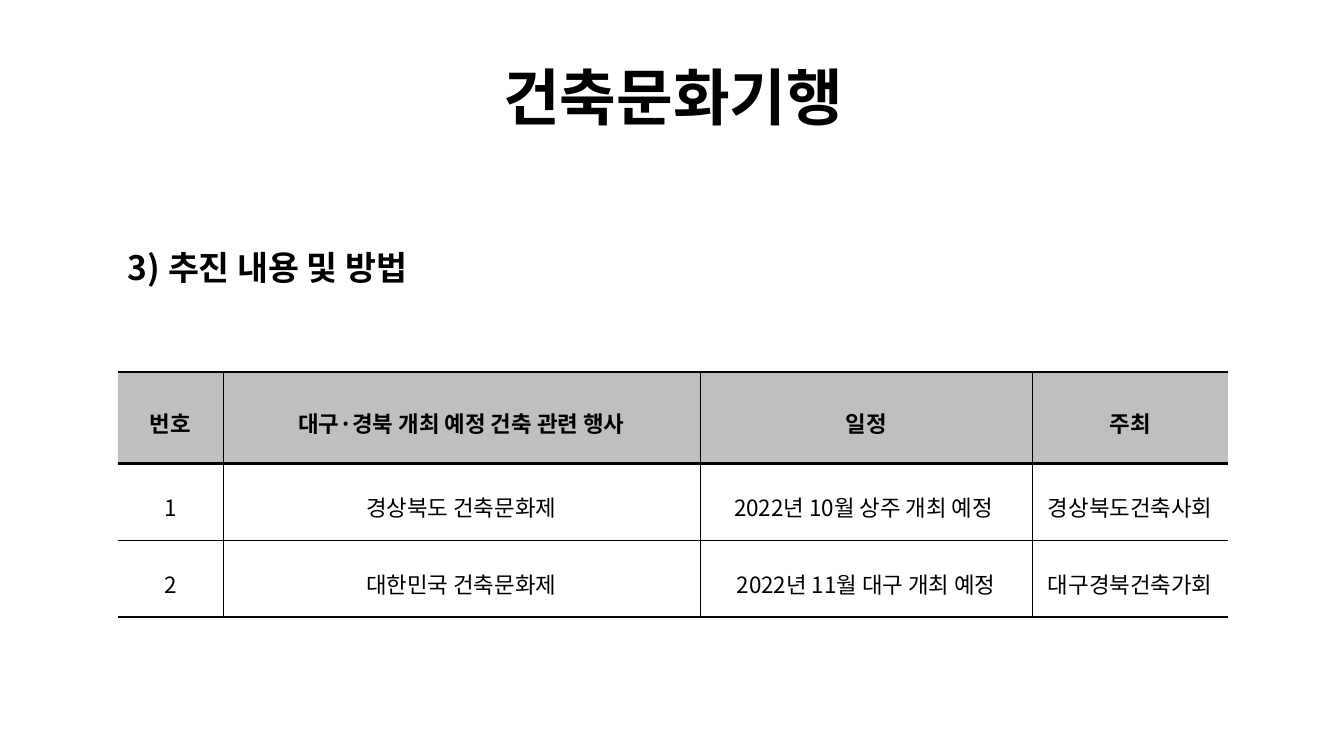
from lxml import etree
from pptx import Presentation
from pptx import util as u
from pptx.dml.color import RGBColor
from pptx.enum import text
from pptx.oxml import ns

FONT = "Noto Sans CJK KR"
INK = "000000"
HEADER_FILL = "BFBFBF"

HEADING = "건축문화기행"
SECTION = "3) 추진 내용 및 방법"
EVENTS = [
    ["번호", "대구·경북 개최 예정 건축 관련 행사", "일정", "주최"],
    ["1", "경상북도 건축문화제", "2022년 10월 상주 개최 예정 ", "경상북도건축사회"],
    ["2", "대한민국 건축문화제", "2022년 11월 대구 개최 예정", "대구경북건축가회"],
]
COLUMNS = [1.04, 4.73, 3.3, 1.94]
ROWS = [0.91, 0.76, 0.76]
ROW_RULES = [1.7, 1.98, 0.25, 1.7]
COLUMN_RULES = [0, 0.28, 0.28, 0.28, 0]
LEFT, TABLE_TOP = 1.17, 3.69
WIDTH = sum(COLUMNS)


def color(value):
    return RGBColor.from_string(value)


def write(frame, words, size, bold, align, spacing, before=0):
    paragraph = frame.paragraphs[0]
    paragraph.alignment = align
    paragraph.line_spacing = spacing
    paragraph.space_before = u.Pt(before)
    run = paragraph.add_run()
    run.text = words
    run.font.name = FONT
    run.font.size = u.Pt(size)
    run.font.bold = bold
    run.font.color.rgb = color(INK)
    east_asian = etree.SubElement(run.font._element, ns.qn("a:ea"))
    east_asian.set("typeface", FONT)


def add_words(slide, box, anchor, *style):
    frame = slide.shapes.add_textbox(*map(u.Inches, box)).text_frame
    frame.word_wrap = True
    frame.vertical_anchor = anchor
    write(frame, *style)


def rule_cell(cell, widths):
    properties = cell._tc.get_or_add_tcPr()
    for place, (side, width) in enumerate(zip("LRTB", widths)):
        line = etree.Element(ns.qn(f"a:ln{side}"), w=str(u.Pt(width)))
        if width:
            fill = etree.SubElement(line, ns.qn("a:solidFill"))
            etree.SubElement(fill, ns.qn("a:srgbClr"), val=INK)
        else:
            etree.SubElement(line, ns.qn("a:noFill"))
        properties.insert(place, line)


def add_events(slide):
    box = map(u.Inches, (LEFT, TABLE_TOP, WIDTH, sum(ROWS)))
    events = slide.shapes.add_table(len(ROWS), len(COLUMNS), *box).table
    events.horz_banding = False
    for column, width in zip(events.columns, COLUMNS):
        column.width = u.Inches(width)
    for r, (row, height) in enumerate(zip(events.rows, ROWS)):
        row.height = u.Inches(height)
        for c, cell in enumerate(row.cells):
            cell.margin_left = cell.margin_right = u.Inches(0.02)
            cell.margin_top = cell.margin_bottom = u.Inches(0.02)
            cell.vertical_anchor = text.MSO_ANCHOR.MIDDLE
            if r == 0:
                cell.fill.solid()
                cell.fill.fore_color.rgb = color(HEADER_FILL)
            else:
                cell.fill.background()
            rule_cell(cell, COLUMN_RULES[c:c + 2] + ROW_RULES[r:r + 2])
            write(cell.text_frame, EVENTS[r][c], 16, r == 0, text.PP_ALIGN.CENTER, 1.3)


def main():
    deck = Presentation()
    deck.slide_width, deck.slide_height = u.Inches(13.33), u.Inches(7.5)
    slide = deck.slides.add_slide(deck.slide_layouts[6])
    add_words(slide, (1.68, 0.29, 10, 1.09), text.MSO_ANCHOR.BOTTOM,
              HEADING, 44, True, text.PP_ALIGN.CENTER, 0.9)
    add_words(slide, (LEFT, 2.2, WIDTH, 5.07), text.MSO_ANCHOR.TOP,
              SECTION, 24, True, text.PP_ALIGN.LEFT, 1.5, 10)
    add_events(slide)
    deck.save("out.pptx")


if __name__ == "__main__":
    main()
